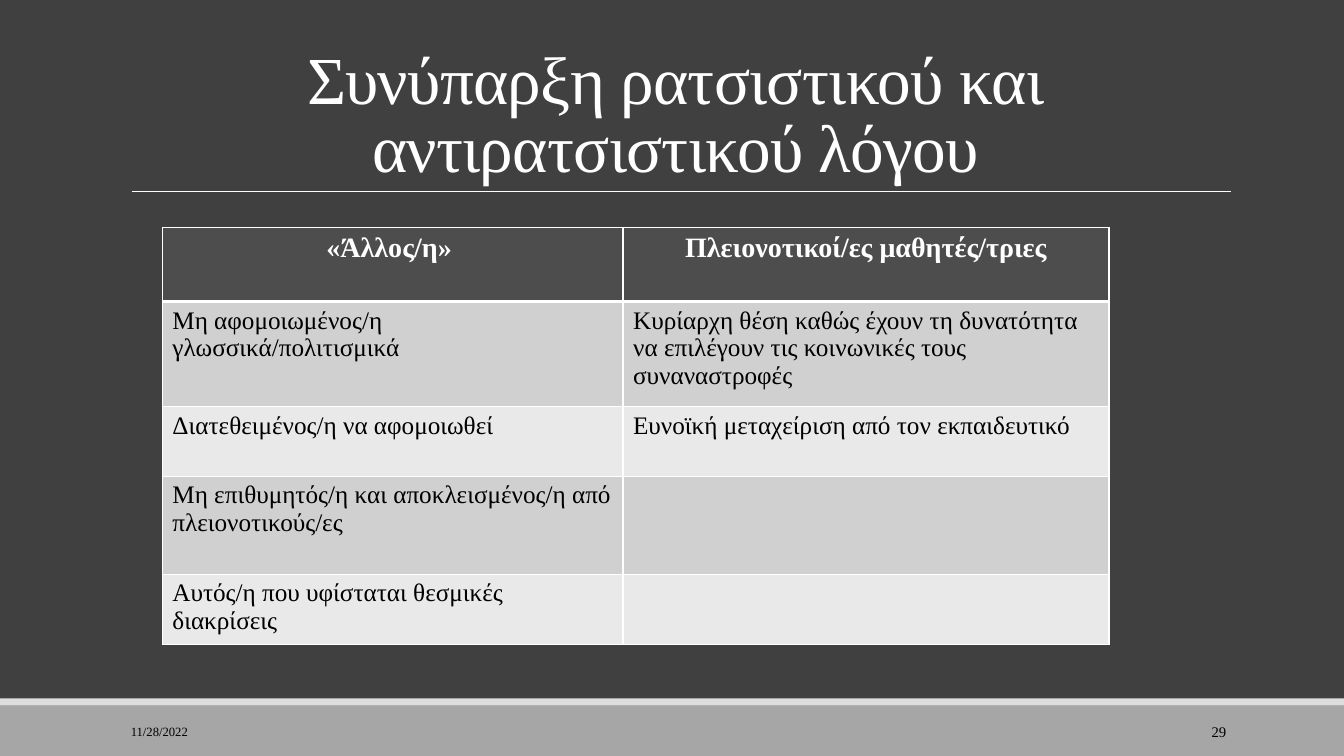
from dataclasses import dataclass

from lxml.etree import SubElement
from pptx import Presentation
from pptx.dml.color import RGBColor
from pptx.enum.shapes import MSO_CONNECTOR, MSO_SHAPE
from pptx.enum.text import MSO_ANCHOR, PP_ALIGN
from pptx.oxml.ns import qn
from pptx.util import Inches, Pt


@dataclass(frozen=True)
class Theme:
    font: str = "Times New Roman"
    background: str = "404040"
    footer_band: str = "A6A6A6"
    footer_edge: str = "DDDDDD"
    light: str = "FFFFFF"
    dark: str = "000000"
    header_fill: str = "4D4D4D"
    row_fills: tuple = ("D0D0D0", "E9E9E9")
    title_size: float = 48
    header_size: float = 20
    body_size: float = 18
    date_size: float = 9
    number_size: float = 10.5


THEME = Theme()

TITLE = "Συνύπαρξη ρατσιστικού και αντιρατσιστικού λόγου"
DISCOURSE = [
    ("«Άλλος/η» ", "Πλειονοτικοί/ες μαθητές/τριες"),
    ("Μη αφομοιωμένος/η γλωσσικά/πολιτισμικά",
     "Κυρίαρχη θέση καθώς έχουν τη δυνατότητα να επιλέγουν τις κοινωνικές τους συναναστροφές"),
    ("Διατεθειμένος/η να αφομοιωθεί", "Ευνοϊκή μεταχείριση από τον εκπαιδευτικό"),
    ("Μη επιθυμητός/η και αποκλεισμένος/η από πλειονοτικούς/ες", ""),
    ("Αυτός/η που υφίσταται θεσμικές διακρίσεις", ""),
]
COLUMN_WIDTHS = (4.57, 4.82)
ROW_HEIGHTS = (0.73, 1.04, 0.69, 0.97, 0.69)


def style(paragraph, size, color, align=PP_ALIGN.LEFT, bold=False):
    paragraph.alignment = align
    paragraph.font.name = THEME.font
    paragraph.font.size = Pt(size)
    paragraph.font.bold = bold
    paragraph.font.color.rgb = RGBColor.from_string(color)


def add_text(slide, box, text, size, color, align, anchor):
    frame = slide.shapes.add_textbox(*map(Inches, box)).text_frame
    frame.word_wrap = True
    frame.vertical_anchor = anchor
    paragraph = frame.paragraphs[0]
    paragraph.text = text
    style(paragraph, size, color, align)
    return paragraph


def add_band(slide, box, color):
    band = slide.shapes.add_shape(MSO_SHAPE.RECTANGLE, *map(Inches, box))
    band.shadow.inherit = False
    band.fill.solid()
    band.fill.fore_color.rgb = RGBColor.from_string(color)
    band.line.fill.background()


def add_title(slide, left, top, width, height):
    bottom = top + height
    rule = slide.shapes.add_connector(
        MSO_CONNECTOR.STRAIGHT, Inches(left + 0.11), Inches(bottom),
        Inches(left + width + 0.01), Inches(bottom))
    rule.line.color.rgb = RGBColor.from_string(THEME.light)
    rule.line.width = Pt(0.5)
    SubElement(rule._element.spPr, qn("a:effectLst"))
    heading = add_text(slide, (left, top, width, height), TITLE, THEME.title_size,
                       THEME.light, PP_ALIGN.CENTER, MSO_ANCHOR.BOTTOM)
    heading.line_spacing = 0.85
    heading.runs[0]._r.get_or_add_rPr().set("spc", "-50")


def add_footer(slide, left, top, width, height):
    edge = 0.07
    add_band(slide, (left, top + edge, width, height - edge), THEME.footer_band)
    add_band(slide, (left, top, width, edge), THEME.footer_edge)
    text_top = top + 0.13
    add_text(slide, (left + 1.2, text_top, 2.7, 0.4), "11/28/2022", THEME.date_size,
             THEME.dark, PP_ALIGN.LEFT, MSO_ANCHOR.MIDDLE)
    add_text(slide, (left + 10.83, text_top, 1.43, 0.4), "29", THEME.number_size,
             THEME.dark, PP_ALIGN.RIGHT, MSO_ANCHOR.MIDDLE)


def set_borders(cell, top, bottom):
    properties = cell._tc.get_or_add_tcPr()
    widths = {"a:lnL": 1, "a:lnR": 1, "a:lnT": top, "a:lnB": bottom}
    for side, width in widths.items():
        border = SubElement(properties, qn(side), w=str(Pt(width)))
        fill = SubElement(border, qn("a:solidFill"))
        SubElement(fill, qn("a:srgbClr"), val=THEME.light)


def add_discourse_table(slide, left, top, width, height):
    table = slide.shapes.add_table(
        len(DISCOURSE), len(COLUMN_WIDTHS), *map(Inches, (left, top, width, height))).table
    for column, share in zip(table.columns, COLUMN_WIDTHS):
        column.width = Inches(width * share / sum(COLUMN_WIDTHS))
    for row, share in zip(table.rows, ROW_HEIGHTS):
        row.height = Inches(height * share / sum(ROW_HEIGHTS))
    for row_index, statements in enumerate(DISCOURSE):
        is_header = row_index == 0
        fill = THEME.header_fill if is_header else THEME.row_fills[(row_index - 1) % 2]
        for column_index, statement in enumerate(statements):
            cell = table.cell(row_index, column_index)
            set_borders(cell, top=3 if row_index == 1 else 1, bottom=3 if is_header else 1)
            cell.fill.solid()
            cell.fill.fore_color.rgb = RGBColor.from_string(fill)
            cell.text = statement
            paragraph = cell.text_frame.paragraphs[0]
            if is_header:
                style(paragraph, THEME.header_size, THEME.light, PP_ALIGN.CENTER, bold=True)
            else:
                style(paragraph, THEME.body_size, THEME.dark)


def main():
    presentation = Presentation()
    presentation.slide_width = Inches(13.33)
    presentation.slide_height = Inches(7.5)
    slide = presentation.slides.add_slide(presentation.slide_layouts[6])
    slide.background.fill.solid()
    slide.background.fill.fore_color.rgb = RGBColor.from_string(THEME.background)
    add_footer(slide, 0, 6.93, 13.33, 0.57)
    add_title(slide, 1.2, 0.31, 11, 1.59)
    add_discourse_table(slide, 1.61, 2.26, 9.39, 4.13)
    presentation.save("out.pptx")


if __name__ == "__main__":
    main()
